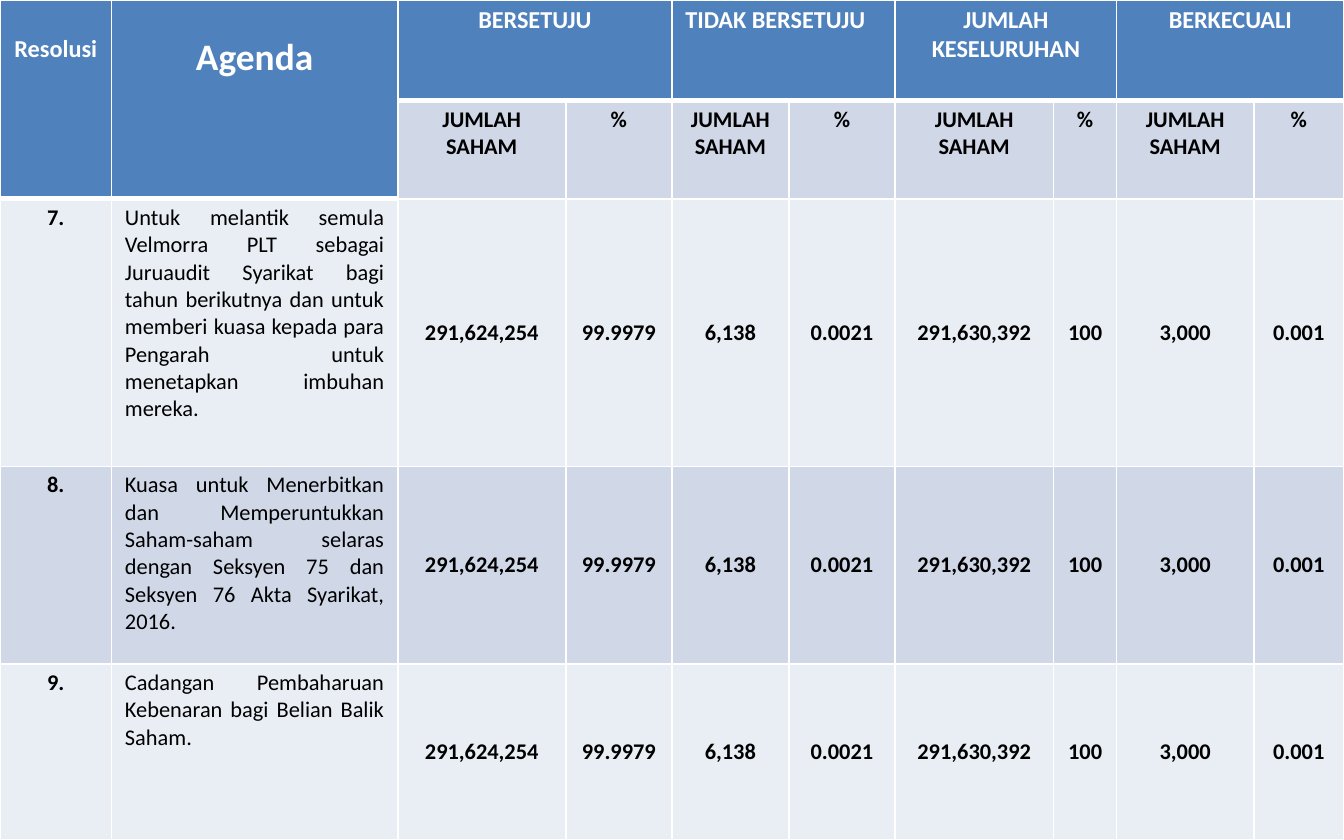
from lxml import etree
from pptx import Presentation
from pptx.dml.color import RGBColor
from pptx.enum.text import MSO_ANCHOR, PP_ALIGN
from pptx.oxml.ns import qn
from pptx.util import Inches, Pt

COLORS = {"header": "4F81BD", "dark_band": "D0D8E8", "light_band": "E9EDF4",
          "white": "FFFFFF", "black": "000000"}
COLUMN_WIDTHS = [0.83, 2.13, 1.25, 0.79, 0.87, 0.79, 1.18, 0.47, 1.02, 0.67]
ROW_HEIGHTS = [0.75, 0.73, 1.99, 1.47, 1.31]
GROUPS = ["BERSETUJU", "TIDAK BERSETUJU", "JUMLAH KESELURUHAN", "BERKECUALI"]
VOTES = ["291,624,254", "99.9979", "6,138", "0.0021", "291,630,392", "100", "3,000", "0.001"]
AGENDA = {
    "7.": "Untuk melantik semula Velmorra PLT sebagai Juruaudit Syarikat bagi tahun "
          "berikutnya dan untuk memberi kuasa kepada para Pengarah untuk menetapkan "
          "imbuhan mereka.",
    "8.": "Kuasa untuk Menerbitkan dan Memperuntukkan Saham-saham selaras dengan "
          "Seksyen 75 dan Seksyen 76 Akta Syarikat, 2016.",
    "9.": "Cadangan Pembaharuan Kebenaran bagi Belian Balik Saham.",
}


def set_borders(cell, bottom_width):
    properties = cell._tc.get_or_add_tcPr()
    for side, width in (("L", 1), ("R", 1), ("T", 1), ("B", bottom_width)):
        line = etree.SubElement(properties, qn(f"a:ln{side}"), w=str(Pt(width)))
        fill = etree.SubElement(line, qn("a:solidFill"))
        etree.SubElement(fill, qn("a:srgbClr"), val=COLORS["white"])


def write_cell(cell, text, size=12, color="black", bold=True, align=PP_ALIGN.CENTER):
    cell.text_frame.text = text
    paragraph = cell.text_frame.paragraphs[0]
    paragraph.alignment = align
    font = paragraph.runs[0].font
    font.name = "Calibri"
    font.size = Pt(size)
    font.bold = bold
    font.color.rgb = RGBColor.from_string(COLORS[color])


deck = Presentation()
deck.slide_width = Inches(10)
deck.slide_height = Inches(6.25)
page = deck.slides.add_slide(deck.slide_layouts[6])

table = page.shapes.add_table(len(ROW_HEIGHTS), len(COLUMN_WIDTHS), 0, 0,
                              Inches(10), Inches(6.25)).table
for column, width in zip(table.columns, COLUMN_WIDTHS):
    column.width = Inches(width)
for row, height in zip(table.rows, ROW_HEIGHTS):
    row.height = Inches(height)

for row_index in range(len(ROW_HEIGHTS)):
    for column_index in range(len(COLUMN_WIDTHS)):
        cell = table.cell(row_index, column_index)
        is_header = row_index == 0 or (row_index == 1 and column_index < 2)
        band = "dark_band" if row_index % 2 else "light_band"
        set_borders(cell, 3 if is_header else 1)
        cell.fill.solid()
        cell.fill.fore_color.rgb = RGBColor.from_string(COLORS["header" if is_header else band])
        cell.margin_left = cell.margin_right = Inches(0.1)
        cell.margin_top = cell.margin_bottom = Inches(0.04)

for column_index, (heading, size) in enumerate([("Resolusi", 13), ("Agenda", 20)]):
    cell = table.cell(0, column_index)
    cell.merge(table.cell(1, column_index))
    cell.margin_top = Inches(0.26)
    write_cell(cell, heading, size, "white")

for group_index, heading in enumerate(GROUPS):
    first = 2 + 2 * group_index
    cell = table.cell(0, first)
    cell.merge(table.cell(0, first + 1))
    align = PP_ALIGN.LEFT if heading == "TIDAK BERSETUJU" else PP_ALIGN.CENTER
    write_cell(cell, heading, 13, "white", align=align)
    write_cell(table.cell(1, first), "JUMLAH SAHAM")
    write_cell(table.cell(1, first + 1), "%")

for row_index, (number, agenda) in enumerate(AGENDA.items(), start=2):
    write_cell(table.cell(row_index, 0), number)
    write_cell(table.cell(row_index, 1), agenda, bold=False, align=PP_ALIGN.JUSTIFY)
    for column_index, value in enumerate(VOTES, start=2):
        cell = table.cell(row_index, column_index)
        cell.vertical_anchor = MSO_ANCHOR.MIDDLE
        write_cell(cell, value)

deck.save("out.pptx")
